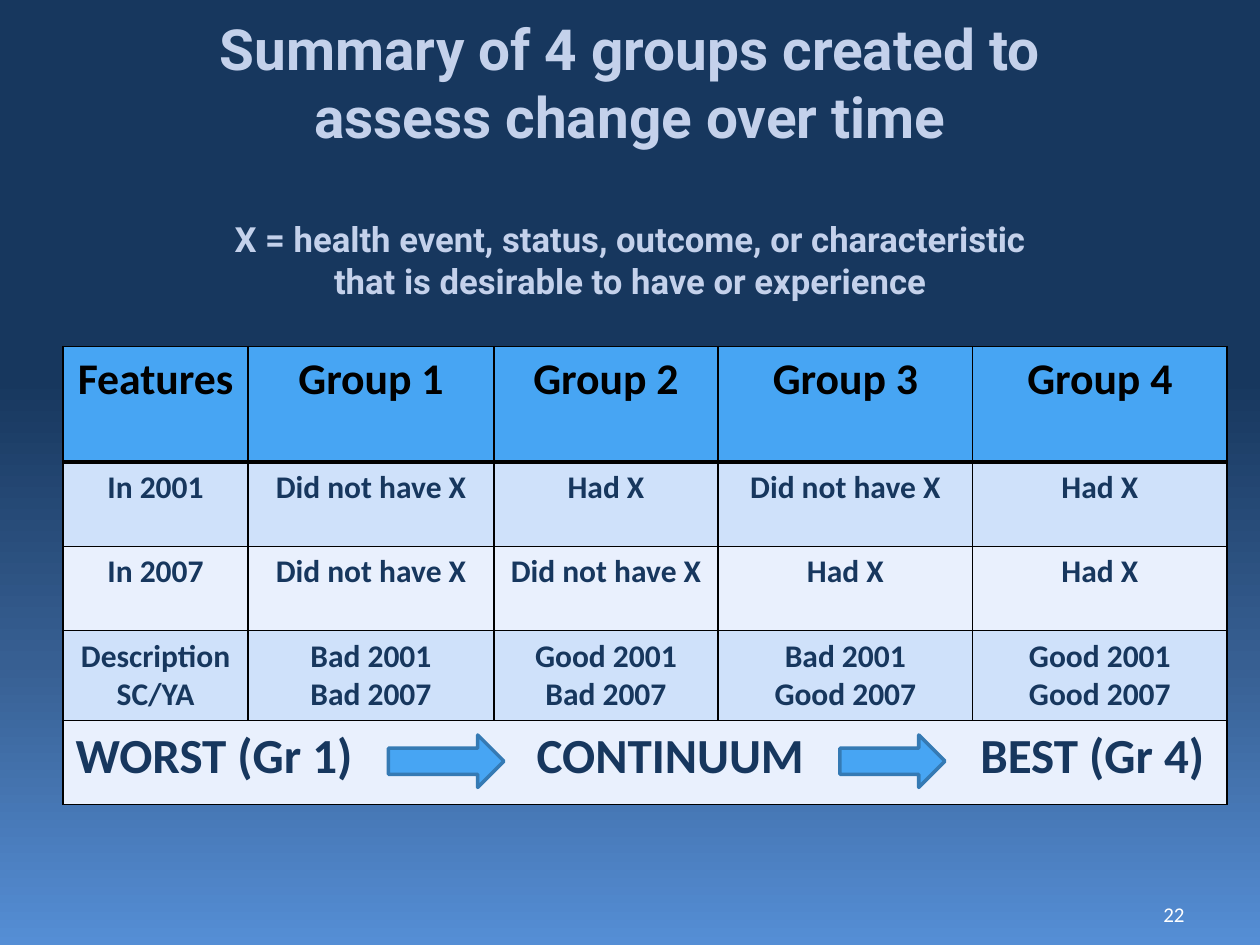
from pptx import Presentation
from pptx.dml.color import RGBColor
from pptx.enum.shapes import MSO_SHAPE
from pptx.enum.text import MSO_ANCHOR, MSO_AUTO_SIZE, PP_ALIGN
from pptx.oxml import parse_xml
from pptx.oxml.ns import nsdecls, qn
from pptx.util import Pt

ARROW = MSO_SHAPE.RIGHT_ARROW
MIDDLE = MSO_ANCHOR.MIDDLE
CENTER, LEFT, RIGHT = PP_ALIGN.CENTER, PP_ALIGN.LEFT, PP_ALIGN.RIGHT

TITLE = "Summary of 4 groups created to\vassess change over time"
DEFINITION = ("X = health event, status, outcome, or characteristic\v"
              "that is desirable to have or experience")
ROWS = [
    ["Features", "Group 1", "Group 2", "Group 3", "Group 4"],
    ["In 2001", "Did not have X", "Had X", "Did not have X", "Had X"],
    ["In 2007", "Did not have X", "Did not have X", "Had X", "Had X"],
    ["Description SC/YA", "Bad 2001\nBad 2007", "Good 2001\nBad 2007",
     "Bad 2001\nGood 2007", "Good 2001\nGood 2007"],
]
CONTINUUM = ["WORST (Gr 1)", "CONTINUUM", "BEST (Gr 4)"]
PAGE = "22"

THEME = {
    "background": [(0, "17375E"), (40, "17375E"), (70, "375F92"), (100, "558ED5")],
    "title": {"name": "Roboto", "size": 32.4, "bold": True, "color": "C4D1EB"},
    "definition": {"name": "Roboto", "size": 19.8, "bold": True, "color": "C4D1EB"},
    "header": {"name": "Calibri", "size": 25, "bold": True, "color": "000000"},
    "body": {"name": "Calibri", "size": 18, "bold": True, "color": "17375E"},
    "continuum": {"name": "Calibri", "size": 28, "bold": True, "color": "17375E"},
    "page": {"name": "Calibri", "size": 12, "bold": False, "color": "FFFFFF"},
    "header_fill": "47A5F3",
    "bands": ["E9F0FD", "CFE1FA"],
    "border": "000000",
    "arrow_fill": "47A5F3",
    "arrow_line": "357AB4",
}

TITLE_BOX = (36, 24, 648, 90)
TABLE_BOX = (36, 198, 665.28, 261.36)
PAGE_BOX = (516, 516, 168, 13)
COLUMNS = [105.84, 140.4, 128.16, 145.44, 145.44]
HEADER_HEIGHT, ROW_HEIGHT = 66, 48.24
TAB_STOPS = [263.5, 517]
ARROWS = [(222, 420, 66, 30), (480, 420, 60, 30)]
THIN, THICK = 1, 3


def points(box):
    return [Pt(v) for v in box]


def write(p, text, style, align):
    p.text = text
    p.alignment = align
    for r in p.runs:
        for key, value in THEME[style].items():
            if key == "color":
                r.font.color.rgb = RGBColor.from_string(value)
            else:
                setattr(r.font, key, Pt(value) if key == "size" else value)


def paint_background(s):
    fill = s.background.fill
    fill.gradient()
    fill.gradient_angle = 270
    stops = next(s.element.iter(qn("a:gsLst")))
    for stop in list(stops):
        stops.remove(stop)
    for position, color in THEME["background"]:
        stops.append(parse_xml(
            f'<a:gs {nsdecls("a")} pos="{position * 1000}">'
            f'<a:srgbClr val="{color}"/></a:gs>'))


def add_title(s):
    title = s.shapes.title
    title.left, title.top, title.width, title.height = points(TITLE_BOX)
    tf = title.text_frame
    frame = {"word_wrap": True, "auto_size": MSO_AUTO_SIZE.NONE,
             "vertical_anchor": MIDDLE, "margin_top": Pt(42), "margin_bottom": 0}
    for key, value in frame.items():
        setattr(tf, key, value)
    for p, text, style, gap in [
            (tf.paragraphs[0], TITLE, "title", 0),
            (tf.add_paragraph(), DEFINITION, "definition", 39)]:
        write(p, text, style, CENTER)
        p.space_before = Pt(gap)
        p.line_spacing = 1.0


def set_borders(cell, top, bottom):
    tc_pr = cell._tc.get_or_add_tcPr()
    sides = [("L", THIN), ("R", THIN), ("T", top), ("B", bottom)]
    for i, (side, width) in enumerate(sides):
        tc_pr.insert(i, parse_xml(
            f'<a:ln{side} {nsdecls("a")} w="{Pt(width)}"><a:solidFill>'
            f'<a:srgbClr val="{THEME["border"]}"/></a:solidFill></a:ln{side}>'))


def add_groups_table(s):
    last = len(ROWS)
    table = s.shapes.add_table(last + 1, len(COLUMNS), *points(TABLE_BOX)).table
    table.first_row = table.horz_banding = False
    for column, width in zip(table.columns, COLUMNS):
        column.width = Pt(width)
    for i, row in enumerate(table.rows):
        row.height = Pt(ROW_HEIGHT if i else HEADER_HEIGHT)
        for cell in row.cells:
            color = THEME["bands"][i % 2] if i else THEME["header_fill"]
            cell.fill.solid()
            cell.fill.fore_color.rgb = RGBColor.from_string(color)
            set_borders(cell, THICK if i == 1 else THIN, THIN if i else THICK)
    for i, texts in enumerate(ROWS):
        for j, text in enumerate(texts):
            tf = table.cell(i, j).text_frame
            for k, line in enumerate(text.split("\n")):
                p = tf.add_paragraph() if k else tf.paragraphs[0]
                write(p, line, "body" if i else "header", CENTER)

    scale = table.cell(last, 0)
    scale.merge(table.cell(last, len(COLUMNS) - 1))
    p = scale.text_frame.paragraphs[0]
    write(p, "\t".join(CONTINUUM), "continuum", LEFT)
    tabs = "".join(f'<a:tab pos="{Pt(stop)}" algn="l"/>' for stop in TAB_STOPS)
    p._p.get_or_add_pPr().append(
        parse_xml(f'<a:tabLst {nsdecls("a")}>{tabs}</a:tabLst>'))


def add_page_number(s):
    tf = s.shapes.add_textbox(*points(PAGE_BOX)).text_frame
    tf.word_wrap = True
    tf.vertical_anchor = MIDDLE
    write(tf.paragraphs[0], PAGE, "page", RIGHT)


def add_arrows(s):
    for box in ARROWS:
        sp = s.shapes.add_shape(ARROW, *points(box))
        sp.shadow.inherit = False
        sp.fill.solid()
        sp.fill.fore_color.rgb = RGBColor.from_string(THEME["arrow_fill"])
        sp.line.color.rgb = RGBColor.from_string(THEME["arrow_line"])
        sp.line.width = Pt(2)


def main():
    prs = Presentation()
    prs.slide_width, prs.slide_height = Pt(720), Pt(540)
    s = prs.slides.add_slide(prs.slide_layouts[5])
    paint_background(s)
    add_title(s)
    add_groups_table(s)
    add_page_number(s)
    add_arrows(s)
    prs.save("out.pptx")


if __name__ == "__main__":
    main()
